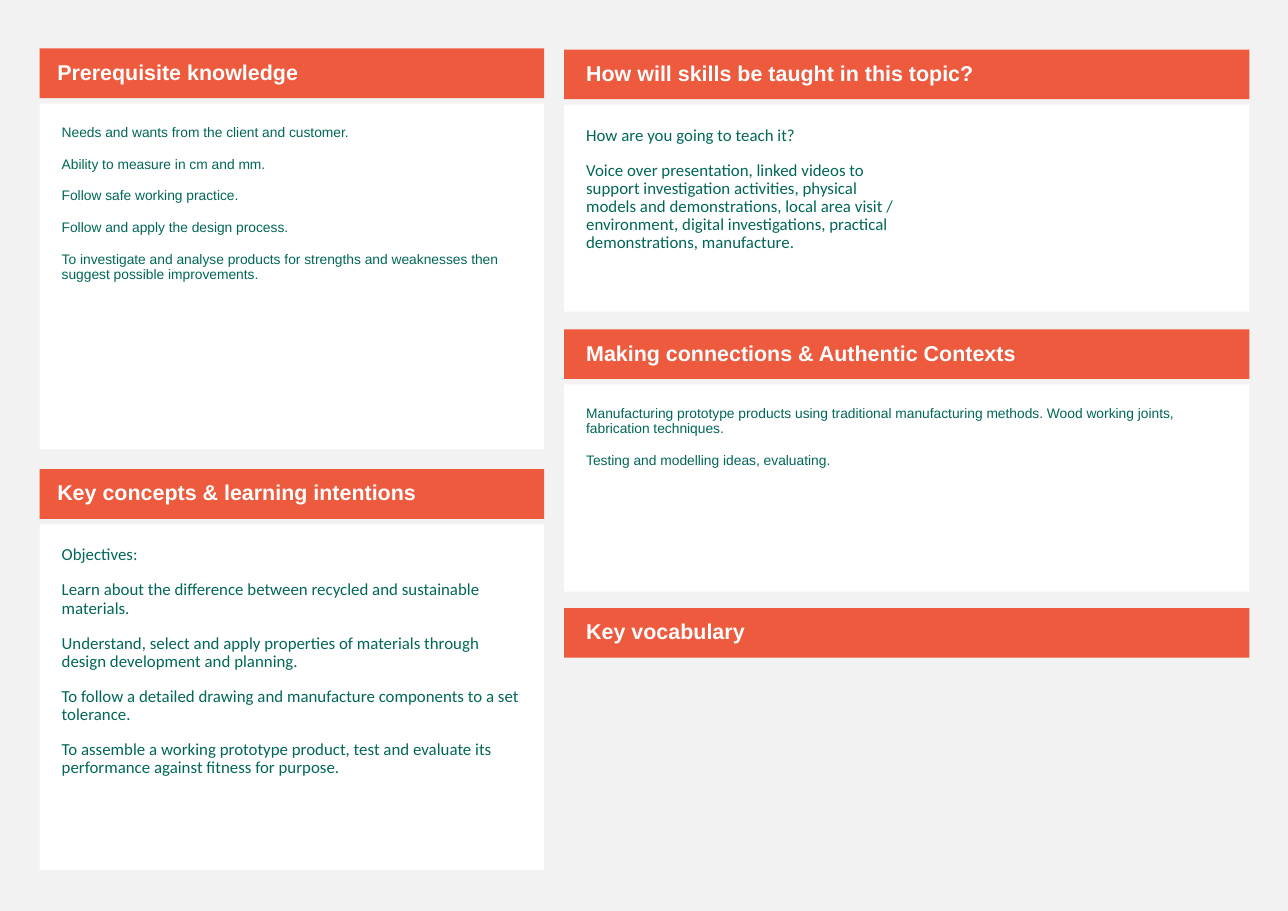
from pptx import Presentation
from pptx import util as u
from pptx.dml import color
from pptx.enum import shapes, text

HEAD_H, BODY_OFFSET = 0.45, 0.5
LEFT_X, LEFT_W = 0.36, 4.58
RIGHT_X, RIGHT_W = 5.12, 6.22
LEFT_BODY_H, RIGHT_BODY_H = 3.14, 1.88
ORANGE, GREEN, WHITE, GREY = "ED5A3E", "006758", "FFFFFF", "F2F2F2"

PREREQUISITES = [
    "Needs and wants from the client and customer.",
    "Ability to measure in cm and mm.",
    "Follow safe working practice.",
    "Follow and apply the design process.",
    "To investigate and analyse products for strengths and weaknesses then "
    "suggest possible improvements.",
]
OBJECTIVES = [
    "Objectives:",
    "Learn about the difference between recycled and sustainable materials.",
    "Understand, select and apply properties of materials through design "
    "development and planning.",
    "To follow a detailed drawing and manufacture components to a set tolerance.",
    "To assemble a working prototype product, test and evaluate its performance "
    "against fitness for purpose.",
]
TEACHING = [
    "How are you going to teach it?",
    "Voice over presentation, linked videos to support investigation activities, "
    "physical models and demonstrations, local area visit / environment, digital "
    "investigations, practical demonstrations, manufacture.",
]
CONNECTIONS = [
    "Manufacturing prototype products using traditional manufacturing methods. "
    "Wood working joints, fabrication techniques.",
    "Testing and modelling ideas, evaluating.",
]


def rgb(value):
    """Return the colour for a hex string."""
    return color.RGBColor.from_string(value)


def add_panel(s, box, fill, insets, anchor):
    """Add a plain filled rectangle and return its text frame."""
    sp = s.shapes.add_shape(shapes.MSO_SHAPE.RECTANGLE, *map(u.Inches, box))
    sp.shadow.inherit = False
    sp.fill.solid()
    sp.fill.fore_color.rgb = rgb(fill)
    sp.line.fill.background()
    tf = sp.text_frame
    tf.word_wrap = True
    tf.vertical_anchor = anchor
    tf.margin_left, tf.margin_top, tf.margin_right, tf.margin_bottom = map(u.Inches, insets)
    return tf


def write(tf, lines, font, size, hex_color, bold=False):
    """Fill a text frame with one paragraph per line in a single style."""
    tf.text = "\n".join(lines)
    for p in tf.paragraphs:
        p.alignment = text.PP_ALIGN.LEFT
        p.line_spacing = 0.9
        p.space_before = u.Pt(11)
        for r in p.runs:
            r.font.name = font
            r.font.size = u.Pt(size)
            r.font.bold = bold
            r.font.color.rgb = rgb(hex_color)


def add_header(s, x, y, w, title, indent):
    """Add an orange title bar."""
    tf = add_panel(s, (x, y, w, HEAD_H), ORANGE, (indent, 0.05, 0.1, 0.05),
                   text.MSO_ANCHOR.MIDDLE)
    write(tf, [title], "Arial", 14, WHITE, bold=True)


def add_body(s, box, lines, font, size, columns=1):
    """Add a white panel of green paragraphs."""
    tf = add_panel(s, box, WHITE, (0.2,) * 4, text.MSO_ANCHOR.TOP)
    write(tf, lines, font, size, GREEN)
    if columns > 1:
        tf._txBody.bodyPr.set("numCol", str(columns))


def add_section(s, box, title, indent, lines, font, size, columns=1):
    """Add a title bar with its body panel below, filling the box."""
    x, y, w, h = box
    add_body(s, (x, y + BODY_OFFSET, w, h - BODY_OFFSET), lines, font, size, columns)
    add_header(s, x, y, w, title, indent)


def add_left_column(s, x, w):
    """Add prior knowledge and learning intentions."""
    h = BODY_OFFSET + LEFT_BODY_H
    add_section(s, (x, 0.44, w, h), "Prerequisite knowledge", 0.16,
                PREREQUISITES, "Arial", 9)
    add_section(s, (x, 4.26, w, h), "Key concepts & learning intentions", 0.16,
                OBJECTIVES, "Calibri", 11)


def add_right_column(s, x, w):
    """Add teaching, connections and the vocabulary title."""
    h = BODY_OFFSET + RIGHT_BODY_H
    add_section(s, (x, 0.45, w, h), "How will skills be taught in this topic?", 0.2,
                TEACHING, "Calibri", 11, columns=2)
    add_section(s, (x, 2.99, w, h), "Making connections & Authentic Contexts", 0.2,
                CONNECTIONS, "Arial", 9)
    add_header(s, x, 5.52, w, "Key vocabulary", 0.2)


def main():
    """Build and save the topic overview slide."""
    prs = Presentation()
    prs.slide_width, prs.slide_height = u.Inches(11.69), u.Inches(8.27)
    s = prs.slides.add_slide(prs.slide_layouts[6])
    s.background.fill.solid()
    s.background.fill.fore_color.rgb = rgb(GREY)
    add_left_column(s, LEFT_X, LEFT_W)
    add_right_column(s, RIGHT_X, RIGHT_W)
    prs.save("out.pptx")


if __name__ == "__main__":
    main()
